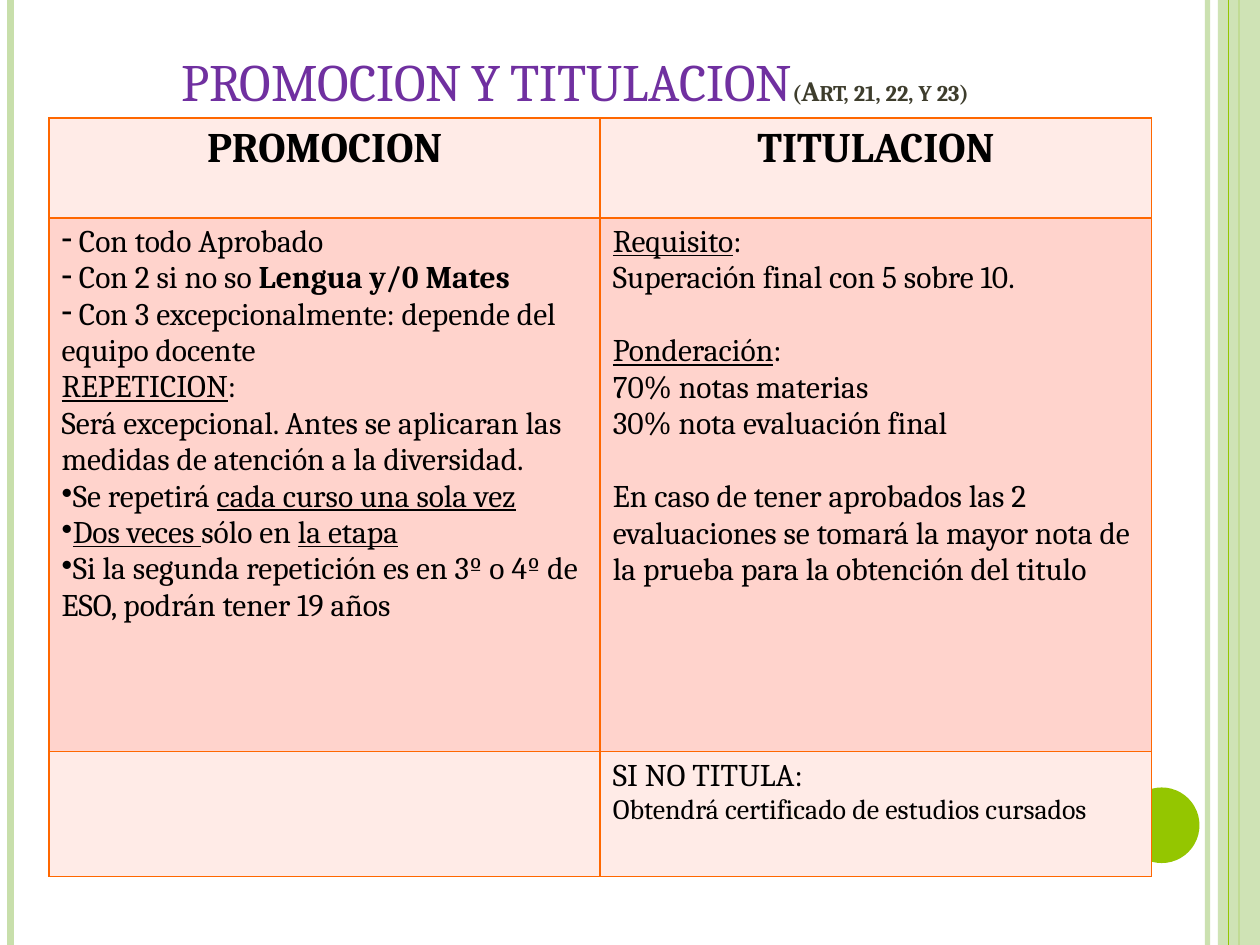
from lxml.etree import SubElement as Sub
from pptx import Presentation
from pptx.dml.color import RGBColor as Rgb
from pptx.enum.shapes import MSO_CONNECTOR as Conn, MSO_SHAPE as Shape
from pptx.enum.text import MSO_ANCHOR as Anchor, MSO_AUTO_SIZE as Auto, PP_ALIGN as Align
from pptx.oxml.ns import qn
from pptx.util import Pt

HUES = {"pale": "C8DFAB", "green": "94C600", "purple": "7030A0", "olive": "3E3D2D",
        "black": "000000", "orange": "FF6700", "light": "FFEBE7", "pink": "FFD3CC"}
FONT = "Cambria"
GAP = 21

LEFT = [
    {"mark": "-", "runs": [(" Con todo Aprobado", "")]},
    {"mark": "-", "runs": [(" Con 2 si no so ", ""), ("Lengua y/0 Mates", "b")]},
    {"mark": "-", "runs": [(" Con 3 excepcionalmente: depende del equipo docente", "")]},
    {"runs": [("REPETICION", "u"), (":", "")]},
    {"runs": [("Será excepcional. Antes se aplicaran las medidas de atención "
               "a la diversidad.", "")]},
    {"mark": "•", "runs": [("Se repetirá ", ""), ("cada curso una sola vez", "u")]},
    {"mark": "•", "runs": [("Dos veces ", "u"), ("sólo en ", ""), ("la etapa", "u")]},
    {"mark": "•", "runs": [("Si la segunda repetición es en 3º o 4º de ESO, "
                            "podrán tener 19 años", "")]},
]
RIGHT = [
    {"runs": [("Requisito", "u"), (":", "")]},
    {"runs": [("Superación final con 5 sobre 10.", "")]},
    {"gap": GAP, "runs": [("Ponderación", "u"), (":", "")]},
    {"runs": [("70% notas materias", "")]},
    {"runs": [("30% nota evaluación final", "")]},
    {"gap": GAP, "runs": [("En caso de tener aprobados las 2 evaluaciones se tomará la mayor "
                           "nota de la prueba para la obtención del titulo", "")]},
]
FAIL = [
    {"runs": [("SI NO TITULA:", "")]},
    {"size": 16, "runs": [("Obtendrá certificado de estudios cursados", "")]},
]


def head(text):
    """Return the content of a heading cell."""
    return [{"size": 24, "align": Align.CENTER, "runs": [(text, "b")]}]


ROWS = [
    (57, "light", [head("PROMOCION"), head("TITULACION")]),
    (305, "pink", [LEFT, RIGHT]),
    (71.5, "light", [[], FAIL]),
]


def tint(name):
    """Return the colour object for a named hue."""
    return Rgb.from_string(HUES[name])


def fade(node, alpha):
    """Make the solid colour below a node partly transparent."""
    hue = next(node.iter(qn("a:srgbClr")))
    Sub(hue, qn("a:alpha"), val=str(alpha * 1000))


def add_run(para, text, size, hue, style=""):
    """Append one styled run to a paragraph."""
    run = para.add_run()
    run.text = text
    font = run.font
    font.name, font.size = FONT, Pt(size)
    font.bold, font.underline = "b" in style, "u" in style
    font.color.rgb = tint(hue)
    return run


def add_rule(slide, x, top, high, hue, width, alpha=100):
    """Draw one upright rule."""
    rule = slide.shapes.add_connector(Conn.STRAIGHT, Pt(x), Pt(top), Pt(x), Pt(top + high))
    rule.line.width = Pt(width)
    rule.line.color.rgb = tint(hue)
    props = rule._element.spPr
    if alpha < 100:
        fade(props, alpha)
    Sub(props, qn("a:effectLst"))


def add_block(slide, kind, box, hue, alpha=100):
    """Draw one plain filled shape."""
    block = slide.shapes.add_shape(kind, *map(Pt, box))
    block.shadow.inherit = False
    block.fill.solid()
    block.fill.fore_color.rgb = tint(hue)
    block.line.fill.background()
    if alpha < 100:
        fade(block._element.spPr, alpha)


def add_trim(slide, box):
    """Decorate both side edges of the page."""
    left, top, wide, high = box
    edge = left + wide
    add_rule(slide, edge - 30, top, high, "pale", 3, 93)
    add_rule(slide, left + 6, top, high, "pale", 4.5)
    add_rule(slide, edge - 12, top, high, "green", 1.5)
    add_block(slide, Shape.RECTANGLE, (edge - 24, top, 24, high), "pale", 87)
    add_rule(slide, edge - 18, top, high, "green", 0.75)
    add_block(slide, Shape.OVAL, (edge - 77.76, top + 450, 43.2, 43.2), "green")


def set_title(slide, box):
    """Place and fill the title."""
    title = slide.shapes.title
    title.left, title.top, title.width, title.height = map(Pt, box)
    frame = title.text_frame
    frame.auto_size, frame.word_wrap = Auto.NONE, True
    frame.vertical_anchor = Anchor.BOTTOM
    para = frame.paragraphs[0]
    para.alignment = Align.CENTER
    for text, size, hue, style in (("PROMOCION Y TITULACION", 30, "purple", ""),
                                   ("(Art, 21, 22, y 23) ", 16, "olive", "b")):
        run = add_run(para, text, size, hue, style)
        run._r.get_or_add_rPr().set("cap", "small")


def fill_cell(cell, paras, hue):
    """Fill, border and write one cell."""
    cell.fill.solid()
    cell.fill.fore_color.rgb = tint(hue)
    props = cell._tc.get_or_add_tcPr()
    for spot, side in enumerate(("lnL", "lnR", "lnT", "lnB")):
        line = props.makeelement(qn("a:" + side), {"w": str(Pt(1))})
        solid = Sub(line, qn("a:solidFill"))
        Sub(solid, qn("a:srgbClr"), val=HUES["orange"])
        props.insert(spot, line)
    frame = cell.text_frame
    for spot, item in enumerate(paras):
        para = frame.add_paragraph() if spot else frame.paragraphs[0]
        para.alignment = item.get("align", Align.LEFT)
        para.space_before = Pt(item.get("gap", 0))
        if "mark" in item:
            Sub(para._p.get_or_add_pPr(), qn("a:buChar"), char=item["mark"])
        for text, style in item["runs"]:
            add_run(para, text, item.get("size", 18), "black", style)


def add_grid(slide, box):
    """Build the two-column table."""
    wide = box[2]
    grid = slide.shapes.add_table(len(ROWS), 2, *map(Pt, box)).table
    grid.first_row = grid.horz_banding = False
    for col in grid.columns:
        col.width = Pt(wide / 2)
    for row, (high, hue, cells) in zip(grid.rows, ROWS):
        row.height = Pt(high)
        for cell, paras in zip(row.cells, cells):
            fill_cell(cell, paras, hue)


def main():
    """Build and save the slide."""
    deck = Presentation()
    deck.slide_width, deck.slide_height = Pt(720), Pt(540)
    slide = deck.slides.add_slide(deck.slide_layouts[5])
    add_trim(slide, (0, 0, 720, 540))
    set_title(slide, (36, 21.6, 588, 46))
    add_grid(slide, (28, 67.5, 630, sum(row[0] for row in ROWS)))
    deck.save("out.pptx")


if __name__ == "__main__":
    main()
